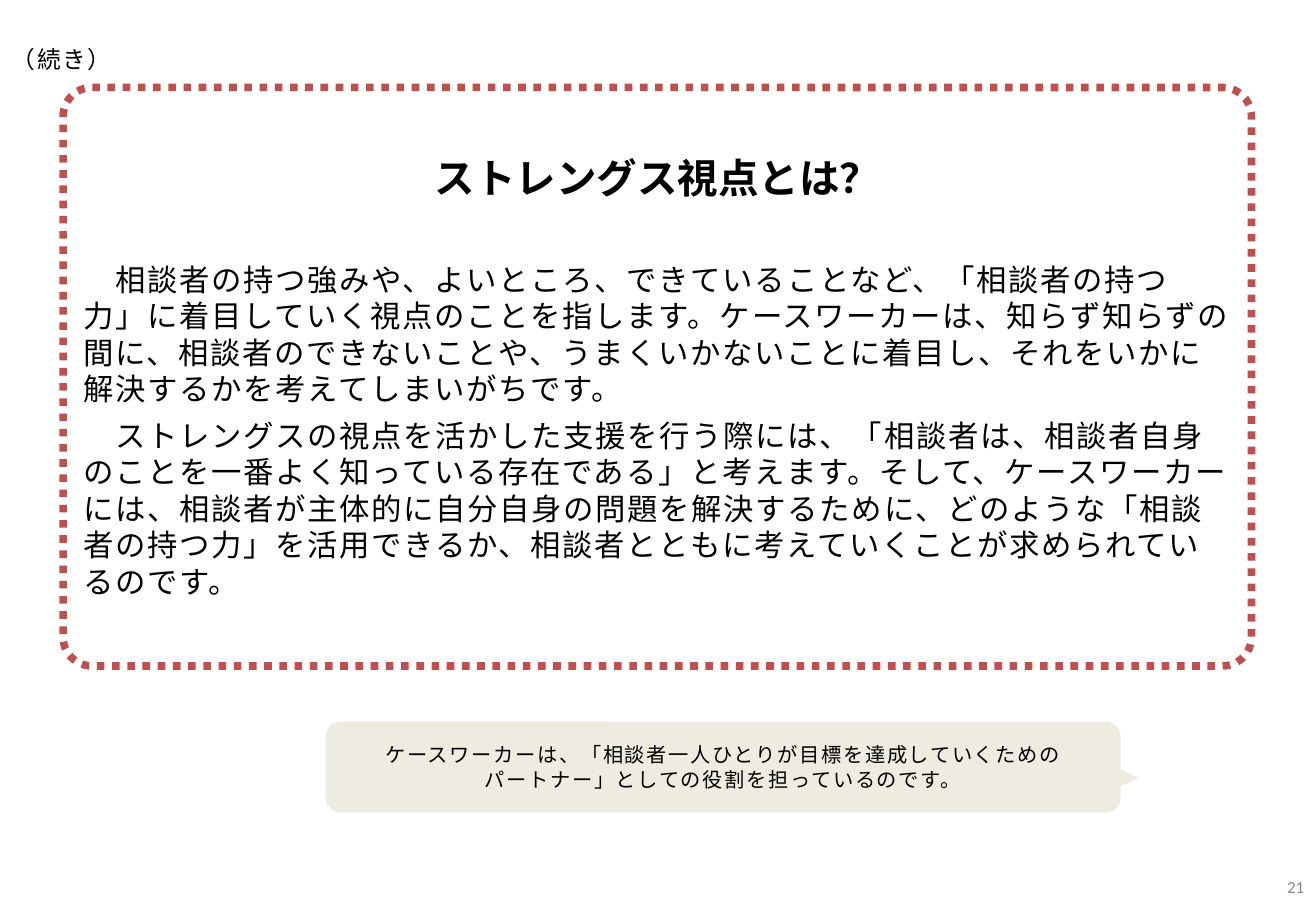
from lxml.etree import SubElement
from pptx import Presentation
from pptx.dml.color import RGBColor
from pptx.enum.dml import MSO_LINE
from pptx.enum.shapes import MSO_SHAPE as Shape
from pptx.enum.text import MSO_ANCHOR as Anchor, PP_ALIGN as Align
from pptx.oxml.ns import qn
from pptx.util import Inches, Pt

BLACK = RGBColor(0x00, 0x00, 0x00)
GRAY = RGBColor(0x89, 0x89, 0x89)
RED = RGBColor(0xC0, 0x50, 0x4D)
CREAM = RGBColor(0xEE, 0xEC, 0xE1)
JAPANESE, LATIN = "Noto Sans CJK JP", "Calibri"

EXPLANATION = [
    "　相談者の持つ強みや、よいところ、できていることなど、「相談者の持つ力」に着目していく視点のことを指します。"
    "ケースワーカーは、知らず知らずの間に、相談者のできないことや、うまくいかないことに着目し、"
    "それをいかに解決するかを考えてしまいがちです。",
    "　ストレングスの視点を活かした支援を行う際には、「相談者は、相談者自身のことを一番よく知っている存在である」と考えます。"
    "そして、ケースワーカーには、相談者が主体的に自分自身の問題を解決するために、"
    "どのような「相談者の持つ力」を活用できるか、相談者とともに考えていくことが求められているのです。",
]
PARTNER_ROLE = [
    "ケースワーカーは、「相談者一人ひとりが目標を達成していくための",
    "パートナー」としての役割を担っているのです。",
]


class SlideBuilder:
    """Draws styled elements on one slide, placed in percent of its size."""

    def __init__(self, width, height):
        self.deck = Presentation()
        self.deck.slide_width, self.deck.slide_height = Inches(width), Inches(height)
        self.page = self.deck.slides.add_slide(self.deck.slide_layouts[5])

    def area(self, left, top, width, height):
        across, down = self.deck.slide_width / 100, self.deck.slide_height / 100
        return [round(share * unit) for share, unit in
                zip((left, top, width, height), (across, down, across, down))]

    def fill_text(self, box, lines, size, align=Align.LEFT, anchor=Anchor.MIDDLE, color=BLACK,
                  font=JAPANESE, bold=False, tracking=0, before=0, pitch=None):
        frame = box.text_frame
        frame.word_wrap = True
        frame.vertical_anchor = anchor
        frame.text = "\n".join(lines)
        for para in frame.paragraphs:
            para.alignment = align
            para.space_before = Pt(before)
            if pitch:
                para.line_spacing = Pt(pitch)
            para.font.size, para.font.bold = Pt(size), bold
            para.font.color.rgb = color
            para.font.name = font
            style = para._p.pPr.find(qn("a:defRPr"))
            style.set("spc", str(tracking * 100))
            SubElement(style, qn("a:ea")).set("typeface", font)

    def title(self, text, area, **style):
        box = self.page.shapes.title
        box.left, box.top, box.width, box.height = self.area(*area)
        self.fill_text(box, [text], **style)

    def label(self, text, area, **style):
        self.fill_text(self.page.shapes.add_textbox(*self.area(*area)), [text], **style)

    def shape(self, kind, area, fill=None):
        box = self.page.shapes.add_shape(kind, *self.area(*area))
        box.shadow.inherit = False
        box.line.fill.background()
        if fill is None:
            box.fill.background()
        else:
            box.fill.solid()
            box.fill.fore_color.rgb = fill
        return box

    def dotted_panel(self, lines, area, bottom_inset, **style):
        box = self.shape(Shape.ROUNDED_RECTANGLE, area)
        box.adjustments[0] = 0.05
        box.line.color.rgb = RED
        box.line.width = Pt(4.5)
        box.line.dash_style = MSO_LINE.ROUND_DOT
        box.text_frame.margin_bottom = Inches(bottom_inset)
        self.fill_text(box, lines, anchor=Anchor.BOTTOM, **style)

    def callout(self, lines, area, pointer_area, **style):
        self.fill_text(self.shape(Shape.ROUNDED_RECTANGLE, area, CREAM), lines, **style)
        self.shape(Shape.ISOSCELES_TRIANGLE, pointer_area, CREAM).rotation = 90


def main():
    slide = SlideBuilder(10.83, 7.5)
    slide.label("21", (96.21, 94.67, 3.79, 5.33), size=10, align=Align.RIGHT,
                color=GRAY, font=LATIN)
    slide.title("ストレングス視点とは？", (4.8, 15.5, 90.3, 8), size=24,
                align=Align.CENTER, bold=True)
    slide.dotted_panel(EXPLANATION, (4.8, 9.6, 90.3, 63.5), bottom_inset=0.48,
                       size=18, tracking=1, before=6, pitch=21.6)
    slide.label("（続き）", (0, 4.27, 20.31, 5.2), size=14, anchor=Anchor.TOP,
                tracking=1, before=3, pitch=17)
    slide.callout(PARTNER_ROLE, (24.75, 79.2, 60.4, 10), (83.84, 83.33, 2.6, 4.13),
                  size=12, align=Align.CENTER, tracking=1, pitch=14.8)
    slide.deck.save("out.pptx")


if __name__ == "__main__":
    main()
